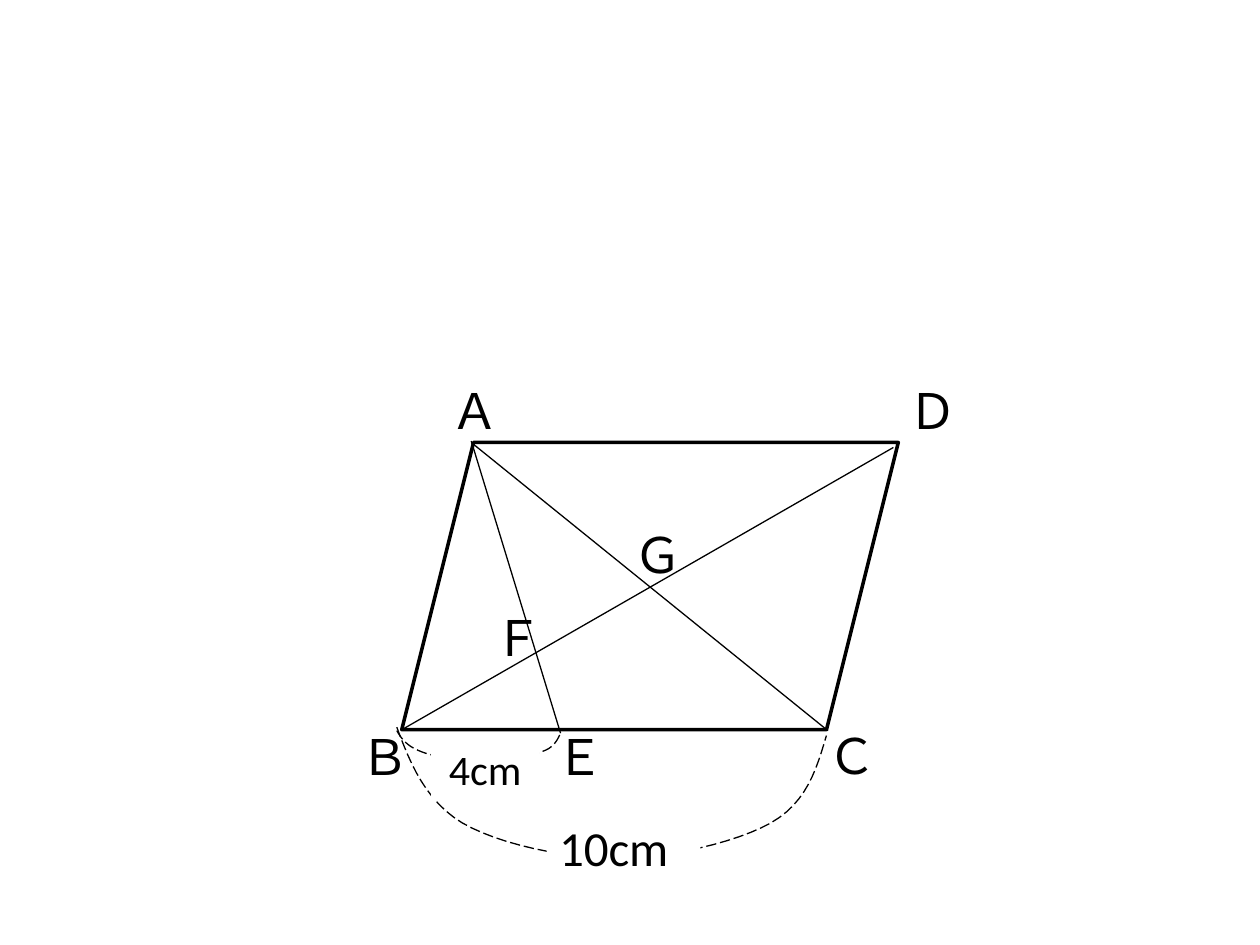
import pptx
import pptx.dml.color
import pptx.enum.dml
import pptx.enum.shapes
import pptx.enum.text
import pptx.oxml.ns
import pptx.util
from lxml import etree

Cm, Pt = pptx.util.Cm, pptx.util.Pt
BLACK = pptx.dml.color.RGBColor(0, 0, 0)
WHITE = pptx.dml.color.RGBColor(255, 255, 255)
CURVE_STEPS = 12

presentation = pptx.Presentation()
presentation.slide_width, presentation.slide_height = Cm(25.4), Cm(19.05)
shapes = presentation.slides.add_slide(presentation.slide_layouts[6]).shapes


def add_label(text, left, top, width, height, size):
    label = shapes.add_textbox(Cm(left), Cm(top), Cm(width), Cm(height))
    label.text_frame.word_wrap = True
    label.text_frame.text = text
    font = label.text_frame.paragraphs[0].runs[0].font
    font.name, font.size = "Calibri", Pt(size)
    font.color.rgb = BLACK
    return label


def bezier_point(start, control1, control2, end, t):
    return tuple(
        (1 - t) ** 3 * p0 + 3 * (1 - t) ** 2 * t * p1 + 3 * (1 - t) * t**2 * p2 + t**3 * p3
        for p0, p1, p2, p3 in zip(start, control1, control2, end)
    )


parallelogram = shapes.add_shape(
    pptx.enum.shapes.MSO_SHAPE.PARALLELOGRAM, Cm(8.1), Cm(8.92), Cm(10.01), Cm(5.79))
parallelogram.shadow.inherit = False
parallelogram.fill.background()
parallelogram.line.color.rgb = BLACK
parallelogram.line.width = Pt(2)

# Segments AC, BD and AE
for x1, y1, x2, y2 in [
    (9.5, 8.92, 16.69, 14.73),
    (8.1, 14.71, 18.01, 9.02),
    (9.5, 8.89, 11.3, 14.78),
]:
    segment = shapes.add_connector(
        pptx.enum.shapes.MSO_CONNECTOR.STRAIGHT, Cm(x1), Cm(y1), Cm(x2), Cm(y2))
    segment.line.color.rgb = BLACK
    segment.line.width = Pt(0.75)
    etree.SubElement(segment._element.spPr, pptx.oxml.ns.qn("a:effectLst"))

for letter, left, top in [
    ("Ａ", 8.84, 7.54),
    ("Ｅ", 10.95, 14.53),
    ("Ｆ", 9.7, 12.12),
    ("Ｇ", 12.52, 10.44),
    ("Ｄ", 18.06, 7.54),
    ("Ｃ", 16.43, 14.5),
    ("Ｂ", 7.01, 14.53),
]:
    add_label(letter, left, top, 1.35, 1.45, 28)

# Each arc is a start point followed by two controls and an end per Bézier piece
arc_be = [
    (8, 14.73), (8.1, 14.91), (8.23, 15.06), (8.51, 15.16),
    (8.79, 15.27), (9.3, 15.32), (9.7, 15.32),
    (10.08, 15.32), (10.62, 15.27), (10.9, 15.16),
    (11.15, 15.09), (11.23, 14.94), (11.3, 14.78),
]
arc_bc = [
    (8, 14.66), (8.28, 15.42), (8.59, 16.15), (9.32, 16.59),
    (10.06, 17.02), (11.38, 17.3), (12.42, 17.3),
    (13.46, 17.3), (14.83, 16.99), (15.54, 16.59),
    (16.26, 16.18), (16.46, 15.52), (16.66, 14.83),
]
for knots in (arc_be, arc_bc):
    points = [
        bezier_point(*knots[i:i + 4], step / CURVE_STEPS)
        for i in range(0, len(knots) - 1, 3)
        for step in range(1, CURVE_STEPS + 1)
    ]
    start_x, start_y = knots[0]
    builder = shapes.build_freeform(Cm(start_x), Cm(start_y))
    builder.add_line_segments([(Cm(x), Cm(y)) for x, y in points], close=False)
    arc = builder.convert_to_shape()
    arc.shadow.inherit = False
    arc.fill.background()
    arc.line.color.rgb = BLACK
    arc.line.width = Pt(0.75)
    arc.line.dash_style = pptx.enum.dml.MSO_LINE.LONG_DASH

length_bc = add_label("10cm", 11.02, 16.36, 3.1, 1.45, 28)
length_be = add_label("4cm", 8.69, 14.86, 2.18, 1.27, 24)
length_be.text_frame.paragraphs[0].alignment = pptx.enum.text.PP_ALIGN.CENTER
for length in (length_bc, length_be):
    length.fill.solid()
    length.fill.fore_color.rgb = WHITE

presentation.save("out.pptx")
